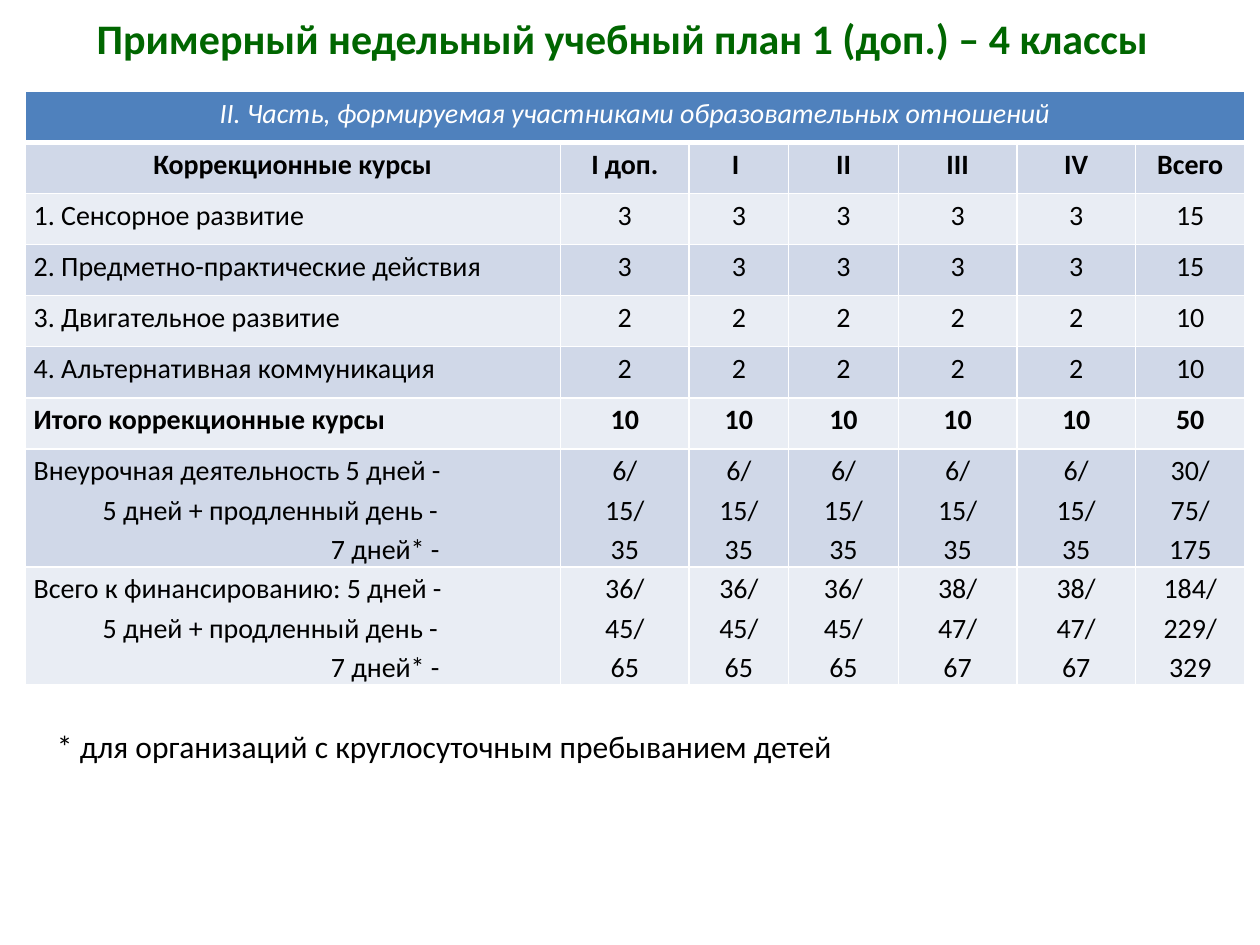
"""Build a one-slide weekly curriculum plan with a table of correctional courses."""
from dataclasses import dataclass

from lxml import etree
from pptx import Presentation
from pptx.dml.color import RGBColor
from pptx.enum.text import MSO_AUTO_SIZE, PP_ALIGN
from pptx.oxml.ns import qn
from pptx.util import Cm, Pt

LEFT, CENTER = PP_ALIGN.LEFT, PP_ALIGN.CENTER
GROW = MSO_AUTO_SIZE.SHAPE_TO_FIT_TEXT


@dataclass(frozen=True)
class Theme:
    font: str = "Calibri"
    title: str = "006600"
    ink: str = "000000"
    white: str = "FFFFFF"
    header: str = "4F81BD"
    bands: tuple = ("E9EDF4", "D0D8E8")
    title_size: int = 24
    note_size: int = 18
    table_size: int = 16
    line_spacing: float = 1.15
    border: int = 1
    header_border: int = 3


COLUMN_WIDTHS = (10.8, 2.59, 2.01, 2.21, 2.39, 2.39, 2.21)
LINE_HEIGHTS = {1: 1.03, 3: 2.36}
LINE_INDENTS = (0, 1.39, 5.99)
DAY_LINES = "5 дней -\n5 дней + продленный день -\n7 дней* -"
HEADING = "II. Часть, формируемая участниками образовательных отношений"
COLUMN_NAMES = ("Коррекционные курсы", "I доп.", "I ", "II", "III", "IV", "Всего")
TOTAL_LABEL = "Итого коррекционные курсы"
ROWS = (
    COLUMN_NAMES,
    ("1. Сенсорное развитие", *["3"] * 5, "15"),
    ("2. Предметно-практические действия", *["3"] * 5, "15"),
    ("3. Двигательное развитие", *["2"] * 5, "10"),
    ("4. Альтернативная коммуникация", *["2"] * 5, "10"),
    (TOTAL_LABEL, *["10"] * 5, "50"),
    (f"Внеурочная деятельность {DAY_LINES}", *["6/\n15/\n35"] * 5, "30/\n75/\n175"),
    (f"Всего к финансированию: {DAY_LINES}", *["36/\n45/\n65"] * 3,
     *["38/\n47/\n67"] * 2, "184/\n229/\n329"),
)


class SlideBuilder:
    def __init__(self, slide, theme):
        self.slide = slide
        self.theme = theme

    def format_text(self, text_frame, size, color, align=LEFT, bold=False, italic=False):
        for paragraph in text_frame.paragraphs:
            paragraph.alignment = align
            for run in paragraph.runs:
                run.font.name = self.theme.font
                run.font.size = Pt(size)
                run.font.bold = bold
                run.font.italic = italic
                run.font.color.rgb = RGBColor.from_string(color)

    def text(self, text, left, top, width, height, size, color, **style):
        shape = self.slide.shapes.add_textbox(Cm(left), Cm(top), Cm(width), Cm(height))
        text_frame = shape.text_frame
        text_frame.word_wrap = True
        text_frame.auto_size = GROW
        text_frame.text = text
        self.format_text(text_frame, size, color, **style)

    def border(self, cell, side, width):
        line = etree.SubElement(cell._tc.get_or_add_tcPr(), qn(f"a:ln{side}"), w=str(Pt(width)))
        fill = etree.SubElement(line, qn("a:solidFill"))
        etree.SubElement(fill, qn("a:srgbClr"), val=self.theme.white)

    def cell(self, cell, text, fill, color, top=1, bottom=1, **style):
        cell.margin_left = cell.margin_right = Cm(0.18)
        cell.margin_top = cell.margin_bottom = 0
        for side, width in zip("LRTB", (self.theme.border, self.theme.border, top, bottom)):
            self.border(cell, side, width)
        cell.fill.solid()
        cell.fill.fore_color.rgb = RGBColor.from_string(fill)
        cell.text_frame.text = text
        self.format_text(cell.text_frame, self.theme.table_size, color, **style)
        for paragraph in cell.text_frame.paragraphs:
            paragraph.line_spacing = self.theme.line_spacing

    def indent_lines(self, text_frame):
        for paragraph, indent in zip(text_frame.paragraphs, LINE_INDENTS):
            paragraph._p.get_or_add_pPr().set("marL", str(Cm(indent)))

    def table(self, heading, rows, left, top):
        theme = self.theme
        heights = [LINE_HEIGHTS[1]] + [LINE_HEIGHTS[row[0].count("\n") + 1] for row in rows]
        table = self.slide.shapes.add_table(
            len(heights), len(COLUMN_WIDTHS), Cm(left), Cm(top),
            Cm(sum(COLUMN_WIDTHS)), Cm(sum(heights))).table
        for column, width in zip(table.columns, COLUMN_WIDTHS):
            column.width = Cm(width)
        for row, height in zip(table.rows, heights):
            row.height = Cm(height)
        table.cell(0, 0).merge(table.cell(0, len(COLUMN_WIDTHS) - 1))
        self.cell(table.cell(0, 0), heading, theme.header, theme.white,
                  bottom=theme.header_border, align=CENTER, italic=True)
        for row_index, values in enumerate(rows, 1):
            is_names = values is COLUMN_NAMES
            bold = is_names or values[0] == TOTAL_LABEL
            top_border = theme.header_border if is_names else theme.border
            for column_index, value in enumerate(values):
                align = CENTER if is_names or column_index else LEFT
                self.cell(table.cell(row_index, column_index), value,
                          theme.bands[row_index % 2], theme.ink,
                          top=top_border, align=align, bold=bold)
            self.indent_lines(table.cell(row_index, 0).text_frame)


def main():
    presentation = Presentation()
    presentation.slide_width, presentation.slide_height = Cm(25.4), Cm(19.05)
    theme = Theme()
    builder = SlideBuilder(presentation.slides.add_slide(presentation.slide_layouts[6]), theme)
    builder.table(HEADING, ROWS, 0.5, 1.84)
    builder.text("Примерный недельный учебный план 1 (доп.) – 4 классы",
                 0, 0.13, 25.1, 1.28, theme.title_size, theme.title, align=CENTER, bold=True)
    builder.text("* для организаций с круглосуточным пребыванием детей",
                 0.9, 14.53, 18.6, 1.03, theme.note_size, theme.ink)
    presentation.save("out.pptx")


if __name__ == "__main__":
    main()
